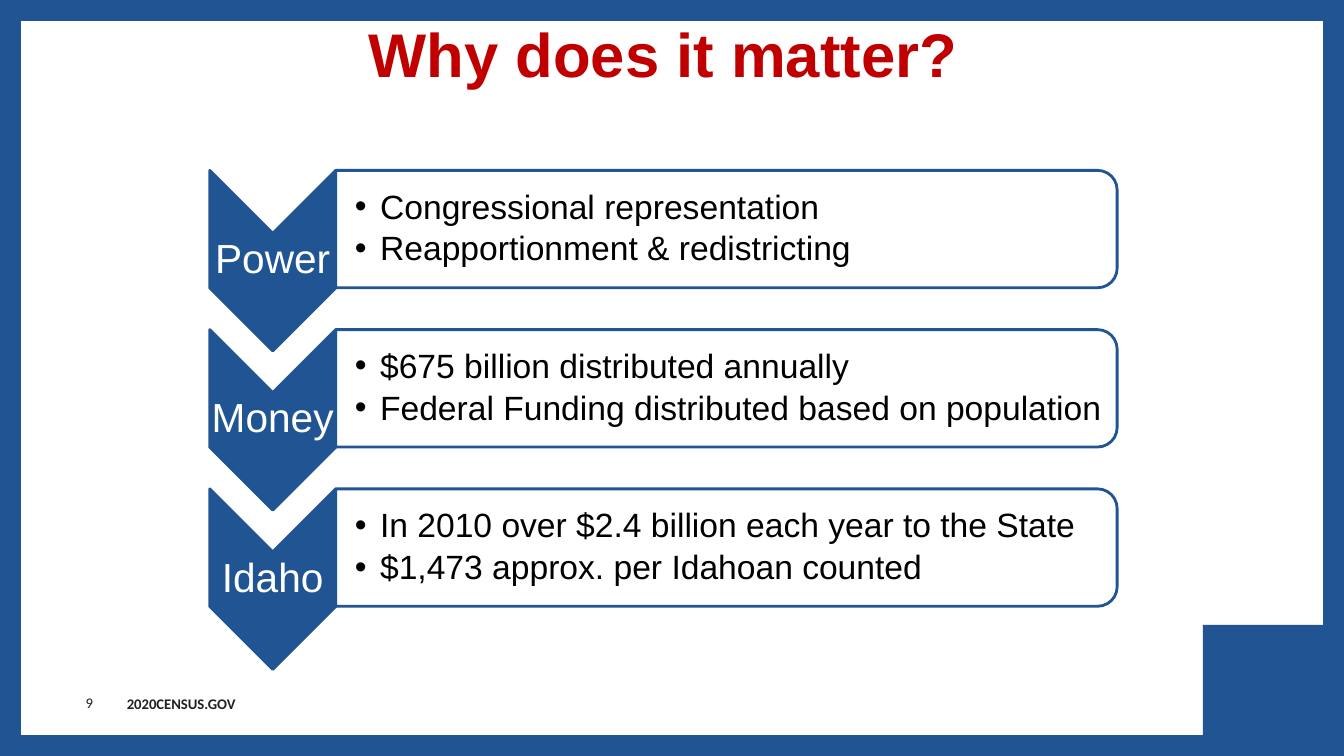
from lxml import etree
from pptx import Presentation
from pptx import util as u
from pptx.dml.color import RGBColor
from pptx.enum import shapes, text
from pptx.oxml.ns import qn

WIDE, HIGH = 13.33, 7.5
HUES = {"blue": "205493", "white": "FFFFFF", "red": "C00000",
        "ink": "231F20", "black": "000000"}
ROWS = [
    ("Power", ["Congressional representation", "Reapportionment & redistricting"]),
    ("Money", ["$675 billion distributed annually",
               "Federal Funding distributed based on population"]),
    ("Idaho", ["In 2010 over $2.4 billion each year to the State",
               "$1,473 approx. per Idahoan counted"]),
]
KIND = shapes.MSO_SHAPE
MID = text.MSO_ANCHOR.MIDDLE
CENTER = text.PP_ALIGN.CENTER


def hue(name):
    return RGBColor.from_string(HUES[name])


def add_form(slide, kind, box, fill, line=None, turn=False):
    """Draw a shape filling box; turn rotates it a quarter and still fills box."""
    x, y, w, h = box
    if turn:
        x, y, w, h = x + (w - h) / 2, y + (h - w) / 2, h, w
    form = slide.shapes.add_shape(kind, *map(u.Inches, (x, y, w, h)))
    form.rotation = 90 if turn else 0
    form.shadow.inherit = False
    form.fill.solid()
    form.fill.fore_color.rgb = hue(fill)
    if line:
        form.line.color.rgb = hue(line)
        form.line.width = u.Pt(2)
    else:
        form.line.fill.background()
    return form


def add_text(slide, box, lines, size, color, face="Arial", bold=False,
             align=None, anchor=None, pads=(0.1, 0.05, 0.1, 0.05),
             bullet=False, lead=None, after=0):
    frame = slide.shapes.add_textbox(*map(u.Inches, box)).text_frame
    frame.word_wrap = True
    frame.vertical_anchor = anchor
    (frame.margin_left, frame.margin_top,
     frame.margin_right, frame.margin_bottom) = map(u.Inches, pads)
    frame.text = "\n".join(lines)
    for para in frame.paragraphs:
        para.alignment = align
        para.line_spacing = lead
        para.space_after = u.Pt(after)
        if bullet:
            props = para._p.get_or_add_pPr()
            props.set("marL", str(u.Inches(0.25)))
            props.set("indent", str(u.Inches(-0.25)))
            etree.SubElement(props, qn("a:buFont")).set("typeface", face)
            etree.SubElement(props, qn("a:buChar")).set("char", "•")
        for run in para.runs:
            run.font.size = u.Pt(size)
            run.font.name = face
            run.font.bold = bold
            run.font.color.rgb = hue(color)


def add_frame(slide):
    """Blue border, white page and blue corner block."""
    slide.background.fill.solid()
    slide.background.fill.fore_color.rgb = hue("blue")
    edge = 0.21
    add_form(slide, KIND.RECTANGLE,
             (edge, edge, WIDE - 2 * edge, HIGH - 2 * edge), "white")
    add_form(slide, KIND.RECTANGLE, (WIDE - 1.4, HIGH - 1.3, 1.4, 1.3), "blue")


def add_foot(slide, box):
    x, y, w, h = box
    add_text(slide, (x, y, 0.67, h), ["9"], 10.5, "ink", "Calibri",
             align=text.PP_ALIGN.RIGHT, anchor=MID)
    add_text(slide, (x + 0.81, y + 0.07, w - 0.81, 0.28), ["2020CENSUS.GOV"],
             10.5, "ink", "Calibri", bold=True)


def add_row(slide, box, label, points):
    """A chevron with its label, and a rounded panel of bullets beside it."""
    x, y, w, h = box
    wing = 1.25
    deep = wing / 2
    add_form(slide, KIND.CHEVRON, (x, y, wing, h), "blue", "blue", turn=True)
    add_text(slide, (x, y + deep, wing, h - 2 * deep), [label], 29, "white",
             align=CENTER, anchor=MID, pads=(0, 0.02, 0, 0.02), lead=0.9)
    side, wide, tall = x + wing, w - wing, h - deep
    panel = add_form(slide, KIND.ROUND_2_SAME_RECTANGLE, (side, y, wide, tall),
                     "white", "blue", turn=True)
    tint = panel._element.spPr.find(qn("a:solidFill"))[0]
    etree.SubElement(tint, qn("a:alpha")).set("val", "90000")
    add_text(slide, (side, y + 0.06, wide - 0.06, tall - 0.12), points, 24,
             "black", anchor=MID, pads=(0.19, 0.02, 0.02, 0.02), bullet=True,
             lead=0.9, after=4)


def add_rows(slide, box):
    x, y, w, h = box
    tall = 1.79
    step = (h - tall) / (len(ROWS) - 1)
    for i, (label, points) in enumerate(ROWS):
        add_row(slide, (x, y + i * step, w, tall), label, points)


def main():
    deck = Presentation()
    deck.slide_width, deck.slide_height = u.Inches(WIDE), u.Inches(HIGH)
    slide = deck.slides.add_slide(deck.slide_layouts[6])
    add_frame(slide)
    add_foot(slide, (0.35, 6.77, 2.12, 0.4))
    add_text(slide, (1.58, 0.11, 10, 0.84), ["Why does it matter?"], 44, "red",
             bold=True, align=CENTER)
    add_rows(slide, (2.08, 1.69, 9, 4.95))
    deck.save("out.pptx")


if __name__ == "__main__":
    main()
